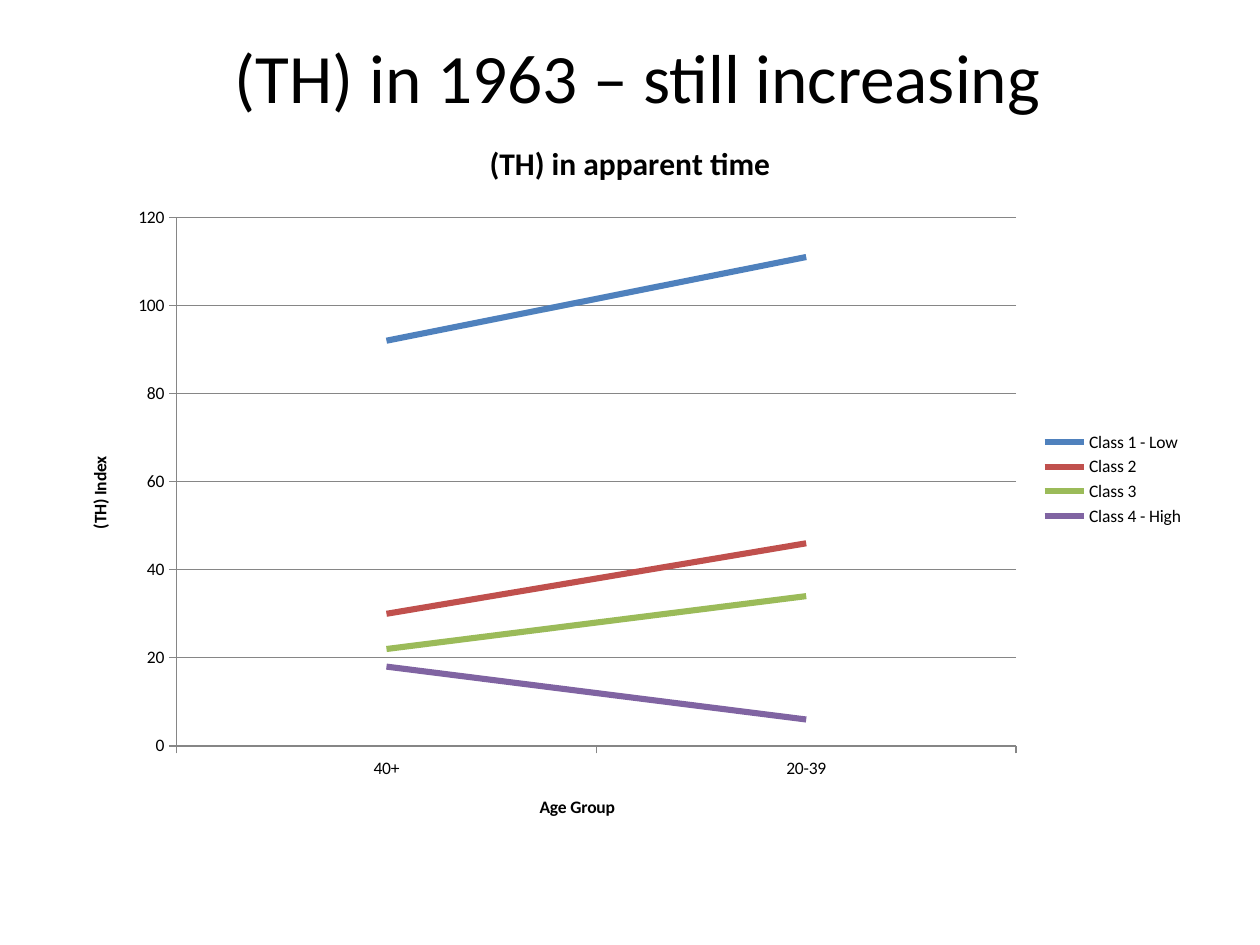
from pptx import Presentation
from pptx.chart.data import CategoryChartData
from pptx.dml.color import RGBColor
from pptx.enum.chart import XL_CHART_TYPE, XL_LEGEND_POSITION, XL_TICK_MARK
from pptx.enum.text import MSO_ANCHOR, PP_ALIGN
from pptx.util import Cm, Pt

LINE = XL_CHART_TYPE.LINE
RIGHT = XL_LEGEND_POSITION.RIGHT
OUTSIDE, NO_TICK = XL_TICK_MARK.OUTSIDE, XL_TICK_MARK.NONE
MIDDLE, CENTER = MSO_ANCHOR.MIDDLE, PP_ALIGN.CENTER

TITLE = " (TH) in 1963 – still increasing"
CHART_TITLE = "(TH) in apparent time"
AGE_GROUPS = ["40+", "20-39"]
CLASSES = [
    ("Class 1 - Low", (92, 111), "4F81BD"),
    ("Class 2", (30, 46), "C0504D"),
    ("Class 3", (22, 34), "9BBB59"),
    ("Class 4 - High", (18, 6), "8064A2"),
]
THEME = {
    "font": "Calibri", "text": "000000", "axis": "868686",
    "title": 39.6, "chart_title": 18, "label": 10,
    "series_width": 3.5, "axis_width": 0.75,
}
LEFT, WIDTH = Cm(1.27), Cm(22.86)
TITLE_TOP, TITLE_HEIGHT = Cm(0.76), Cm(1.55)
CHART_TOP, CHART_HEIGHT = TITLE_TOP + TITLE_HEIGHT, Cm(14.7)


def rgb(value):
    return RGBColor.from_string(value)


def set_font(font, size, bold=False):
    font.name, font.size, font.bold = THEME["font"], Pt(size), bold
    font.color.rgb = rgb(THEME["text"])


def add_text(tf, text, size, bold=False, align=CENTER):
    p = tf.paragraphs[0]
    p.alignment = align
    r = p.add_run()
    r.text = text
    set_font(r.font, size, bold)


def set_line(line, color, width):
    line.color.rgb = rgb(color)
    line.width = Pt(width)


def add_title(s):
    sp = s.shapes.add_textbox(LEFT, TITLE_TOP, WIDTH, TITLE_HEIGHT)
    tf = sp.text_frame
    tf.word_wrap = True
    tf.vertical_anchor = MIDDLE
    add_text(tf, TITLE, THEME["title"])


def add_class_chart(s):
    data = CategoryChartData()
    data.categories = AGE_GROUPS
    for name, values, _ in CLASSES:
        data.add_series(name, values)
    chart = s.shapes.add_chart(LINE, LEFT, CHART_TOP, WIDTH, CHART_HEIGHT, data).chart
    set_font(chart.font, THEME["label"])
    add_text(chart.chart_title.text_frame, CHART_TITLE, THEME["chart_title"], bold=True)
    chart.chart_title.include_in_layout = False
    chart.has_legend = True
    chart.legend.position = RIGHT
    chart.legend.include_in_layout = False
    chart.plots[0].vary_by_categories = False

    for series, (_, _, color) in zip(chart.plots[0].series, CLASSES):
        series.smooth = False
        set_line(series.format.line, color, THEME["series_width"])

    value_axis = chart.value_axis
    value_axis.minimum_scale, value_axis.maximum_scale = 0, 120
    value_axis.major_unit = 20
    value_axis.has_major_gridlines = True
    lines = [value_axis.major_gridlines.format.line]
    for axis, text in ((chart.category_axis, "Age Group"), (value_axis, "(TH) Index")):
        add_text(axis.axis_title.text_frame, text, THEME["label"], bold=True)
        axis.major_tick_mark, axis.minor_tick_mark = OUTSIDE, NO_TICK
        lines.append(axis.format.line)
    for line in lines:
        set_line(line, THEME["axis"], THEME["axis_width"])


def main():
    """Build the slide with the title and the line chart by class."""
    prs = Presentation()
    prs.slide_width, prs.slide_height = Cm(25.4), Cm(19.05)
    s = prs.slides.add_slide(prs.slide_layouts[6])
    add_title(s)
    add_class_chart(s)
    prs.save("out.pptx")


if __name__ == "__main__":
    main()
